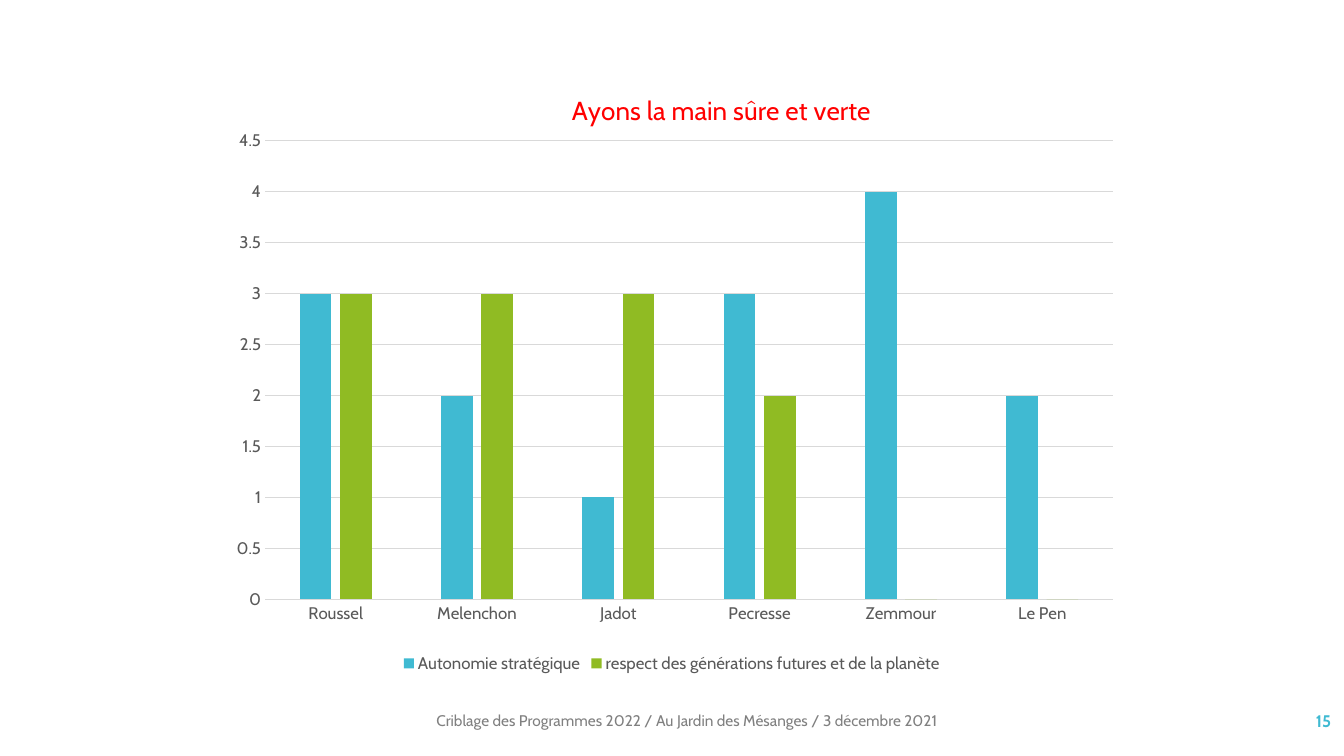
from dataclasses import dataclass

from pptx import Presentation
from pptx import util as u
from pptx.chart.data import CategoryChartData
from pptx.dml.color import RGBColor
from pptx.enum import chart as ch, text
from pptx.oxml import parse_xml
from pptx.oxml.ns import nsdecls


@dataclass(frozen=True)
class Theme:
    font: str = "Cabin"
    blue: str = "40BAD2"
    green: str = "90BB23"
    red: str = "FF0000"
    label: str = "595959"
    grid: str = "D9D9D9"
    footer: str = "808080"
    title_size: float = 18.6
    label_size: float = 12
    footer_size: float = 11
    line_width: float = 0.75


THEME = Theme()
CANDIDATES = ["Roussel", "Melenchon", "Jadot", "Pecresse", "Zemmour", "Le Pen"]
SERIES = [
    ("Autonomie stratégique", (3, 2, 1, 3, 4, 2), THEME.blue),
    ("respect des générations futures et de la planète", (3, 3, 3, 2, 0, 0), THEME.green),
]


def set_font(font, size, color, bold=False):
    font.name = THEME.font
    font.size = u.Pt(size)
    font.bold = bold
    font.color.rgb = RGBColor.from_string(color)


def add_label(s, box, content, size, color, align=text.PP_ALIGN.LEFT, bold=False):
    tf = s.shapes.add_textbox(*map(u.Inches, box)).text_frame
    tf.word_wrap = True
    tf.vertical_anchor = text.MSO_ANCHOR.MIDDLE
    p = tf.paragraphs[0]
    p.text = content
    p.alignment = align
    set_font(p.font, size, color, bold)


def set_layout(element, index, target="", **percents):
    for old in element.xpath("c:layout"):
        element.remove(old)
    inner = f'<c:layoutTarget val="{target}"/>' if target else ""
    inner += "".join(f'<c:{k}Mode val="edge"/>' for k in "xy")
    inner += "".join(f'<c:{k} val="{v / 100:.4f}"/>' for k, v in percents.items())
    element.insert(index, parse_xml(
        f'<c:layout {nsdecls("c")}><c:manualLayout>{inner}</c:manualLayout></c:layout>'))


def style_line(line):
    line.color.rgb = RGBColor.from_string(THEME.grid)
    line.width = u.Pt(THEME.line_width)


def style_axes(chart):
    for axis in (chart.category_axis, chart.value_axis):
        axis.major_tick_mark = axis.minor_tick_mark = ch.XL_TICK_MARK.NONE
        set_font(axis.tick_labels.font, THEME.label_size, THEME.label)
    style_line(chart.category_axis.format.line)
    values = chart.value_axis
    values.minimum_scale, values.maximum_scale, values.major_unit = 0, 4.5, 0.5
    values.format.line.fill.background()
    values.has_major_gridlines = True
    style_line(values.major_gridlines.format.line)


def add_title(chart, content):
    chart.has_title = True
    title = chart.chart_title
    title.include_in_layout = False
    p = title.text_frame.paragraphs[0]
    p.text = content
    set_font(p.font, THEME.title_size, THEME.red)
    set_layout(title._element, 1, x=38.3, y=1.3)


def add_legend(chart):
    chart.has_legend = True
    chart.legend.position = ch.XL_LEGEND_POSITION.BOTTOM
    chart.legend.include_in_layout = False
    set_font(chart.legend.font, THEME.label_size, THEME.label)


def add_column_chart(s, box, title):
    data = CategoryChartData()
    data.categories = CANDIDATES
    for name, values, _ in SERIES:
        data.add_series(name, values)
    chart = s.shapes.add_chart(
        ch.XL_CHART_TYPE.COLUMN_CLUSTERED, *map(u.Inches, box), data).chart
    chart.font.name = THEME.font
    plot = chart.plots[0]
    plot.vary_by_categories = False
    plot.gap_width = 219
    plot.overlap = -27
    for series, (_, _, color) in zip(plot.series, SERIES):
        series.format.fill.solid()
        series.format.fill.fore_color.rgb = RGBColor.from_string(color)
    style_axes(chart)
    add_title(chart, title)
    add_legend(chart)
    plot_area = chart._chartSpace.xpath("c:chart/c:plotArea")[0]
    set_layout(plot_area, 0, "inner", x=4.6, y=10.25, w=94.6, h=76.7)


def main():
    prs = Presentation()
    prs.slide_width, prs.slide_height = u.Inches(13.33), u.Inches(7.5)
    s = prs.slides.add_slide(prs.slide_layouts[6])
    add_label(s, (4.23, 6.95, 6.46, 0.4),
              "Criblage des Programmes 2022 / Au Jardin des Mésanges / 3 décembre 2021",
              THEME.footer_size, THEME.footer)
    add_label(s, (11.63, 6.95, 1.67, 0.4), "15", THEME.label_size, THEME.blue,
              text.PP_ALIGN.RIGHT, True)
    add_column_chart(s, (2.22, 0.79, 8.89, 5.93), "Ayons la main sûre et verte")
    prs.save("out.pptx")


if __name__ == "__main__":
    main()
